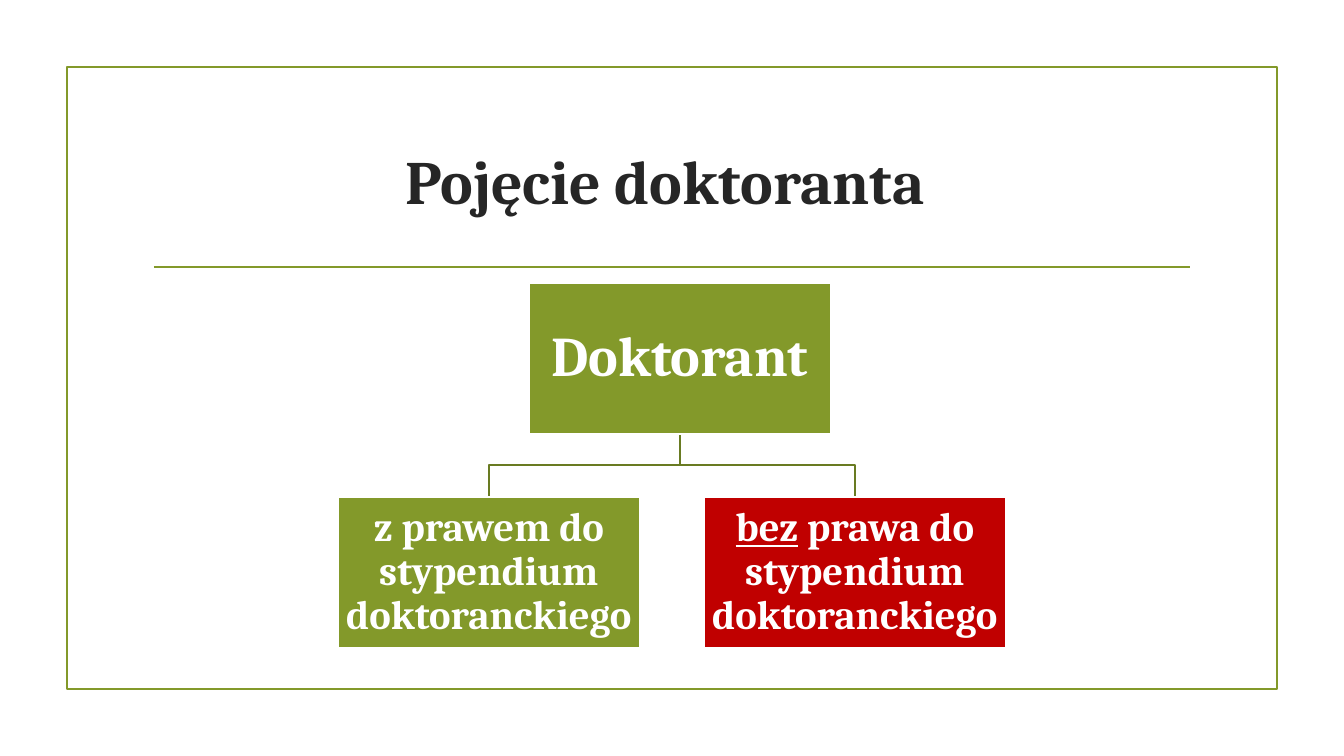
"""Builds a slide with a two-branch chart of doctoral student types."""
import pptx
import pptx.util
import pptx.dml.color
import pptx.enum.shapes
import pptx.enum.text
from lxml import etree

UNIT = 12192000 / 1344
HUES = {"green": "83992A", "dark": "697B22", "red": "C00000",
        "ink": "262626", "white": "FFFFFF"}
RECT = pptx.enum.shapes.MSO_SHAPE.RECTANGLE
MID = pptx.enum.text.MSO_ANCHOR.MIDDLE
WIDE, HIGH = 302, 151


def px(*sizes):
    return [pptx.util.Emu(round(size * UNIT)) for size in sizes]


def ink(hue):
    return pptx.dml.color.RGBColor.from_string(HUES[hue])


deck = pptx.Presentation()
deck.slide_width, deck.slide_height = px(1344, 756)
slide = deck.slides.add_slide(deck.slide_layouts[5])
shapes = slide.shapes

frame = shapes.add_shape(RECT, *px(67, 67, 1210, 622))
frame.shadow.inherit = False
frame.fill.background()

rule = shapes.add_connector(
    pptx.enum.shapes.MSO_CONNECTOR.STRAIGHT, *px(154, 267, 1190, 267))
etree.SubElement(rule._element.spPr, pptx.oxml.ns.qn("a:effectLst"))
for item in (frame, rule):
    item.line.color.rgb = ink("green")
    item.line.width = pptx.util.Pt(1.25)

title = shapes.title
title.left, title.top, title.width, title.height = px(143, 108, 1058, 144)
title.text_frame.text = "Pojęcie doktoranta "
title.text_frame.word_wrap = True
title.text_frame.vertical_anchor = MID
head = title.text_frame.paragraphs[0]
head.alignment = pptx.enum.text.PP_ALIGN.CENTER
head.font.name, head.font.size = "Cambria", pptx.util.Pt(44)
head.font.bold = True
head.font.color.rgb = ink("ink")

root, kids = (529, 283), ((338, 497), (704, 497))
stem, foot, bend = root[0] + WIDE // 2, root[1] + HIGH, 465
for left, top in kids:
    end = left + WIDE // 2
    path = shapes.build_freeform(stem, foot, scale=UNIT)
    path.add_line_segments([(stem, bend), (end, bend), (end, top)], close=False)
    branch = path.convert_to_shape()
    branch.shadow.inherit = False
    branch.fill.background()
    branch.line.color.rgb = ink("dark")
    branch.line.width = pptx.util.Pt(1.25)

nodes = [
    (root, "green", 40, 3, [("Doktorant", False)]),
    (kids[0], "green", 29, 2,
     [("z prawem do stypendium doktoranckiego", False)]),
    (kids[1], "red", 29, 2,
     [("bez", True), (" prawa do stypendium doktoranckiego", False)]),
]
for (left, top), hue, size, pad, parts in nodes:
    box = shapes.add_shape(RECT, *px(left, top, WIDE, HIGH))
    box.shadow.inherit = False
    box.fill.solid()
    box.fill.fore_color.rgb = ink(hue)
    box.line.color.rgb = ink("white")
    box.line.width = pptx.util.Pt(1.25)
    text = box.text_frame
    text.word_wrap = True
    text.vertical_anchor = MID
    (text.margin_left, text.margin_top,
     text.margin_right, text.margin_bottom) = px(pad, pad, pad, pad)
    para = text.paragraphs[0]
    para.alignment = pptx.enum.text.PP_ALIGN.CENTER
    para.line_spacing = 0.9
    para.font.name, para.font.size = "Cambria", pptx.util.Pt(size)
    para.font.bold = True
    para.font.color.rgb = ink("white")
    for words, under in parts:
        run = para.add_run()
        run.text = words
        if under:
            run.font.underline = True

deck.save("out.pptx")
